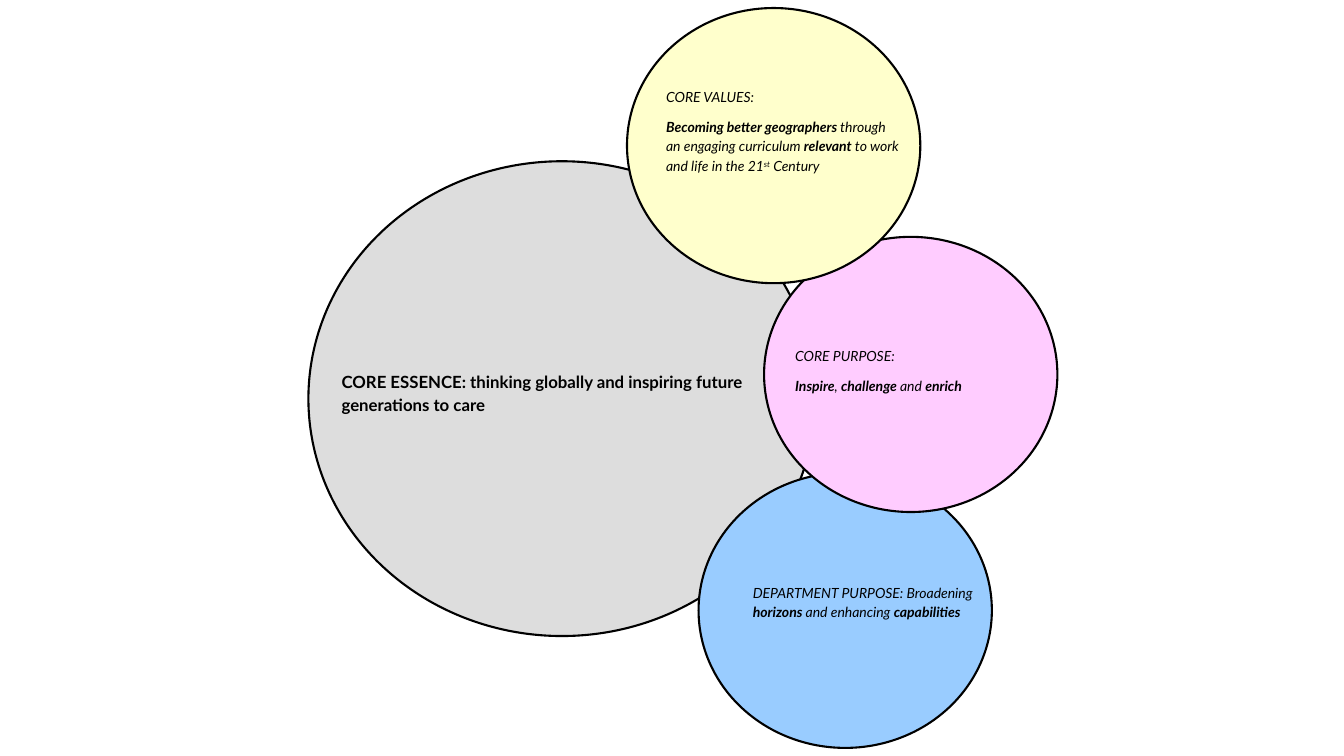
"""Build a slide of four overlapping circles stating a department's core ideas."""
from pptx import Presentation, util as u
from pptx.dml.color import RGBColor
from pptx.enum import shapes, text

BLACK = RGBColor(0, 0, 0)
GREY = RGBColor(0xDD, 0xDD, 0xDD)
BLUE = RGBColor(0x99, 0xCC, 0xFF)
PINK = RGBColor(0xFF, 0xCC, 0xFF)
CREAM = RGBColor(0xFF, 0xFF, 0xCC)

CELL = u.Inches(0.1)
COLS, ROWS = 133.33, 75
SMALL = (29.1, 27.3)


def cells(*counts):
    """Turn counts of grid cells into lengths."""
    return [round(n * CELL) for n in counts]


def circle(group, spot, size, fill):
    """Draw an outlined circle."""
    disc = group.shapes.add_shape(shapes.MSO_SHAPE.OVAL, *cells(*spot, *size))
    disc.shadow.inherit = False
    disc.fill.solid()
    disc.fill.fore_color.rgb = fill
    disc.line.color.rgb = BLACK
    disc.line.width = u.Pt(1.5)


def write(para, words, size, slant):
    """Fill a paragraph, with *bold* and ^raised^ marks in its words."""
    para.line_spacing = 1.15
    para.space_after = u.Pt(8)
    for i, part in enumerate(words.split("*")):
        for j, piece in enumerate(part.split("^")):
            if not piece:
                continue
            run = para.add_run()
            run.text = piece
            font = run.font
            font.name = "Lato"
            font.size = u.Pt(size)
            font.color.rgb = BLACK
            font.bold = i % 2 == 1
            font.italic = slant
            if j % 2:
                run._r.get_or_add_rPr().set("baseline", "30000")


def label(group, area, lines, size=10, slant=True):
    """Place a wrapped text box with one paragraph per line."""
    frame = group.shapes.add_textbox(*cells(*area)).text_frame
    frame.word_wrap = True
    frame.vertical_anchor = text.MSO_ANCHOR.TOP
    for i, words in enumerate(lines):
        para = frame.add_paragraph() if i else frame.paragraphs[0]
        write(para, words, size, slant)


def main():
    """Build and save the slide."""
    deck = Presentation()
    deck.slide_width, deck.slide_height = cells(COLS, ROWS)
    slide = deck.slides.add_slide(deck.slide_layouts[6])
    group = slide.shapes.add_group_shape()

    circle(group, (30.6, 16), (50.3, 47.1), GREY)
    label(group, (32.9, 36.1, 42.2, 7.4),
          ["*CORE ESSENCE: thinking globally and inspiring future "
           "generations to care*"], 12, False)

    themes = [
        ((69.3, 46.9), BLUE, (73.7, 57.2, 23.9, 10.4),
         ["DEPARTMENT PURPOSE: Broadening *horizons* and enhancing "
          "*capabilities*"]),
        ((75.8, 23.5), PINK, (77.9, 33.7, 26.8, 9.2),
         ["CORE PURPOSE:", "*Inspire*, *challenge* and *enrich*"]),
        ((62.2, 0.8), CREAM, (65.1, 8, 25.2, 18),
         ["CORE VALUES:",
          "*Becoming better geographers* through an engaging curriculum "
          "*relevant* to work and life in the 21^st^ Century"]),
    ]
    for spot, fill, area, lines in themes:
        circle(group, spot, SMALL, fill)
        label(group, area, lines)

    deck.save("out.pptx")


if __name__ == "__main__":
    main()
